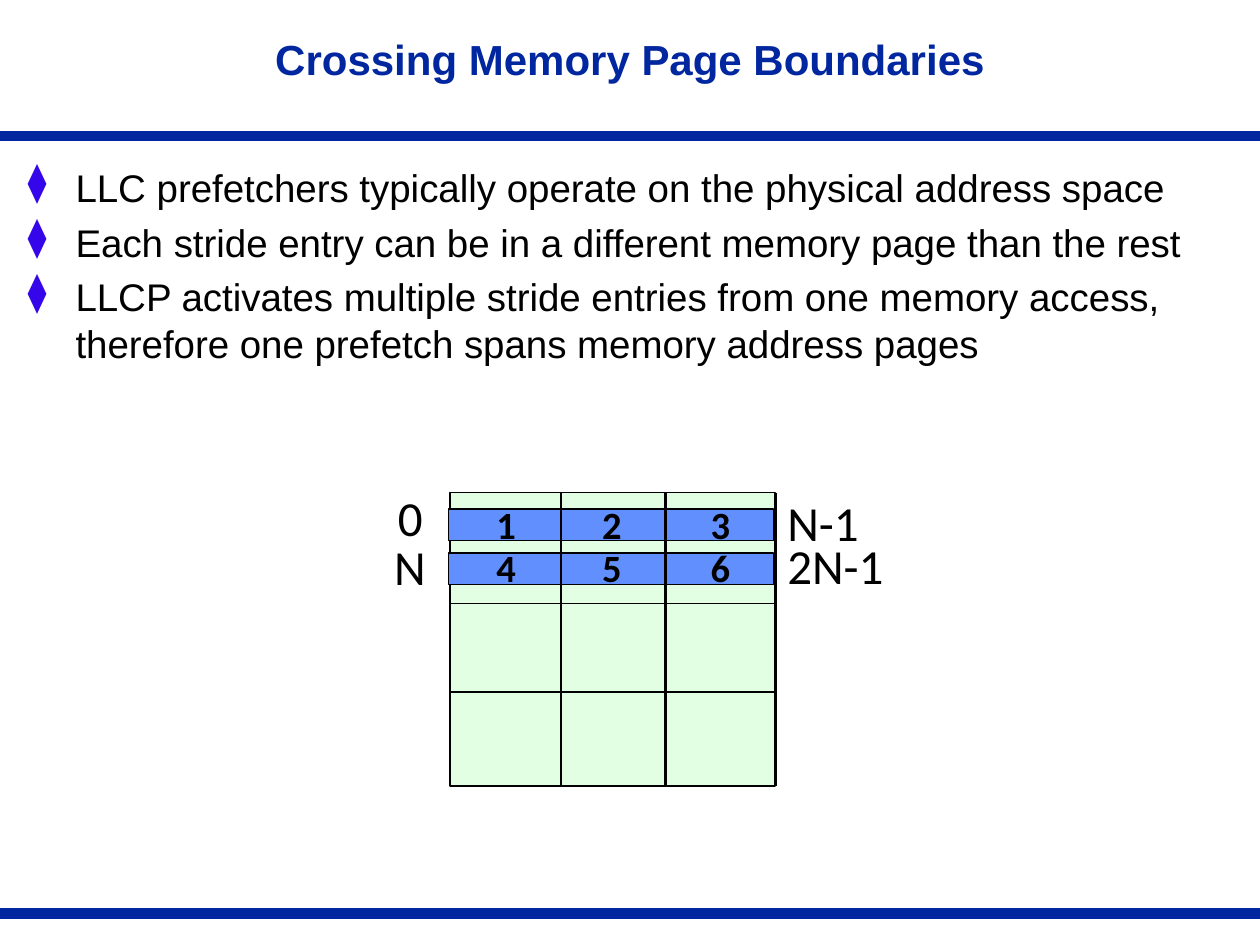
from dataclasses import dataclass

from lxml import etree
from pptx import Presentation
from pptx.dml.color import RGBColor
from pptx.enum.shapes import MSO_CONNECTOR, MSO_SHAPE
from pptx.enum.text import MSO_ANCHOR, MSO_AUTO_SIZE, PP_ALIGN
from pptx.oxml.ns import qn
from pptx.util import Inches, Pt

RECT = MSO_SHAPE.RECTANGLE
STRAIGHT = MSO_CONNECTOR.STRAIGHT
MIDDLE, TOP = MSO_ANCHOR.MIDDLE, MSO_ANCHOR.TOP
CENTER, LEFT = PP_ALIGN.CENTER, PP_ALIGN.LEFT
FIT, NO_FIT = MSO_AUTO_SIZE.SHAPE_TO_FIT_TEXT, MSO_AUTO_SIZE.NONE


@dataclass(frozen=True)
class Theme:
    """Colours, fonts and type sizes of the slide."""
    navy: str = "00279F"
    ink: str = "000000"
    bullet: str = "3406E9"
    page: str = "CCFFCC"
    entry: str = "618FFD"
    sans: str = "Arial"
    diagram: str = "Calibri"
    title: int = 24
    body: int = 22
    address: int = 28
    number: int = 22


THEME = Theme()
BULLETS = (
    "LLC prefetchers typically operate on the physical address space",
    "Each stride entry can be in a different memory page than the rest",
    "LLCP activates multiple stride entries from one memory access, "
    "therefore one prefetch spans memory address pages",
)
ADDRESSES = (("0", 3.06, 3.82, 0.42), ("N-1", 6.15, 3.86, 0.83),
             ("N", 3.03, 4.21, 0.49), ("2N-1", 6.15, 4.2, 1.05))
GRID_LEFT, GRID_TOP, GRID_WIDTH, GRID_HEIGHT = 3.57, 3.91, 2.58, 2.33
GRID_RIGHT, GRID_BOTTOM = GRID_LEFT + GRID_WIDTH, GRID_TOP + GRID_HEIGHT
ROW_LINES = (4.79, 5.49)
COLUMN_LINES = (4.45, 5.28, 5.29, 6.16)
ENTRY_TOPS = (4.04, 4.39)
NUMBER_LEFTS = (3.89, 4.73, 5.59)
NUMBER_TOPS = (3.93, 4.27)


def add_line(slide, x1, y1, x2, y2, color=THEME.ink, width=1):
    """Draw a straight line without a shadow."""
    ends = [Inches(v) for v in (x1, y1, x2, y2)]
    cn = slide.shapes.add_connector(STRAIGHT, *ends)
    cn.line.color.rgb = RGBColor.from_string(color)
    cn.line.width = Pt(width)
    etree.SubElement(cn._element.spPr, qn("a:effectLst"))


def add_rect(slide, x, y, w, h, color, alpha=100):
    """Draw an outlined rectangle with an optional transparent fill."""
    sp = slide.shapes.add_shape(RECT, Inches(x), Inches(y), Inches(w), Inches(h))
    sp.shadow.inherit = False
    sp.fill.solid()
    sp.fill.fore_color.rgb = RGBColor.from_string(color)
    if alpha < 100:
        clr = sp._element.spPr.find(qn("a:solidFill"))[0]
        etree.SubElement(clr, qn("a:alpha"), val=str(alpha * 1000))
    sp.line.color.rgb = RGBColor.from_string(THEME.ink)
    sp.line.width = Pt(1)


def add_box(slide, x, y, w, h, side=0.05, wrap=True, anchor=TOP):
    """Add an empty text box and return its text frame."""
    sp = slide.shapes.add_textbox(Inches(x), Inches(y), Inches(w), Inches(h))
    tf = sp.text_frame
    tf.word_wrap = wrap
    tf.auto_size = NO_FIT if wrap else FIT
    tf.vertical_anchor = anchor
    tf.margin_left = tf.margin_right = Inches(side)
    tf.margin_top = tf.margin_bottom = Inches(0.05)
    return tf


def add_run(p, text, size, font, color=THEME.ink, bold=False):
    """Append a formatted run to a paragraph."""
    r = p.add_run()
    r.text = text
    r.font.size = Pt(size)
    r.font.name = font
    r.font.bold = bold
    r.font.color.rgb = RGBColor.from_string(color)


def set_bullet(p):
    """Give a paragraph a coloured diamond bullet and hanging indent."""
    pPr = p._p.get_or_add_pPr()
    pPr.set("marL", str(Inches(0.38)))
    pPr.set("indent", str(-Inches(0.38)))
    clr = etree.SubElement(pPr, qn("a:buClr"))
    etree.SubElement(clr, qn("a:srgbClr"), val=THEME.bullet)
    etree.SubElement(pPr, qn("a:buChar"), char="⧫")


def add_title(slide, text):
    """Add the centred slide title."""
    p = add_box(slide, 1.75, 0.08, 6.5, 0.83, anchor=MIDDLE).paragraphs[0]
    p.alignment = CENTER
    p.line_spacing = 0.85
    add_run(p, text, THEME.title, THEME.sans, THEME.navy, True)


def add_bullets(slide, items):
    """Add the bulleted body text."""
    tf = add_box(slide, 0.17, 1.25, 9.67, 5.83)
    for i, text in enumerate(items):
        p = tf.add_paragraph() if i else tf.paragraphs[0]
        set_bullet(p)
        p.alignment = LEFT
        if i:
            p.space_before = Pt(5)
        add_run(p, text, THEME.body, THEME.sans)


def add_memory_grid(slide):
    """Draw the memory pages with their stride entries and addresses."""
    add_rect(slide, GRID_LEFT, GRID_TOP, GRID_WIDTH, GRID_HEIGHT, THEME.page, 54)
    for y in ROW_LINES:
        add_line(slide, GRID_LEFT, y, GRID_RIGHT, y)
    for text, x, y, w in ADDRESSES:
        tf = add_box(slide, x, y, w, 0.57, side=0.1, wrap=False)
        add_run(tf.paragraphs[0], text, THEME.address, THEME.diagram)
    for y in ENTRY_TOPS:
        add_rect(slide, GRID_LEFT - 0.01, y, GRID_WIDTH, 0.25, THEME.entry)
    for x in COLUMN_LINES:
        add_line(slide, x, GRID_TOP, x, GRID_BOTTOM)
    for row, y in enumerate(NUMBER_TOPS):
        for col, x in enumerate(NUMBER_LEFTS):
            number = row * len(NUMBER_LEFTS) + col + 1
            tf = add_box(slide, x, y, 0.26, 0.47, wrap=False)
            add_run(tf.paragraphs[0], str(number), THEME.number,
                    THEME.diagram, bold=True)


def main():
    """Build and save the slide."""
    prs = Presentation()
    prs.slide_width, prs.slide_height = Inches(10), Inches(7.5)
    slide = prs.slides.add_slide(prs.slide_layouts[6])
    for y in (7.25, 1.08):
        add_line(slide, 0, y, 10, y, THEME.navy, 6)
    add_title(slide, "Crossing Memory Page Boundaries")
    add_bullets(slide, BULLETS)
    add_memory_grid(slide)
    prs.save("out.pptx")


if __name__ == "__main__":
    main()
